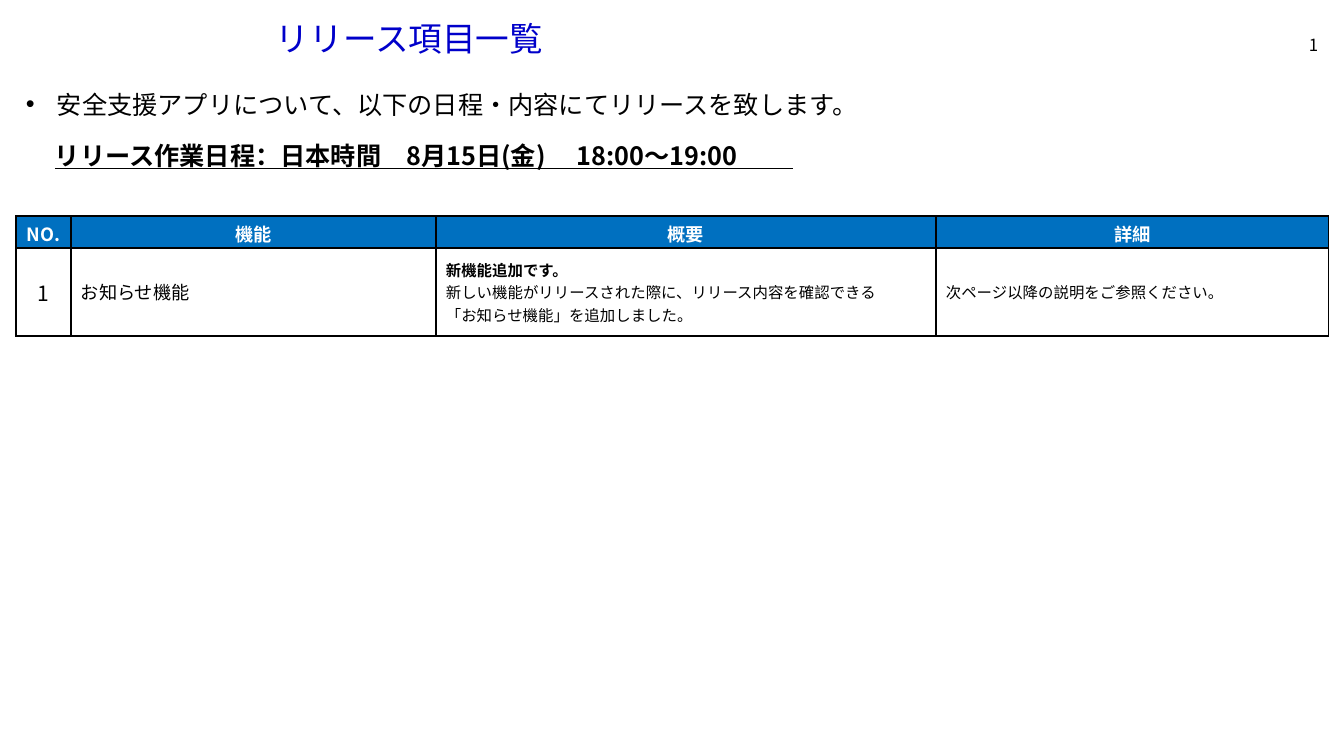
from lxml.etree import SubElement
from pptx import Presentation
from pptx.dml.color import RGBColor
from pptx.enum.text import MSO_ANCHOR, PP_ALIGN
from pptx.oxml.ns import qn
from pptx.util import Emu, Pt

FONT = "Noto Sans CJK JP"
BLACK = RGBColor(0x00, 0x00, 0x00)
WHITE = RGBColor(0xFF, 0xFF, 0xFF)
TITLE_BLUE = RGBColor(0x00, 0x00, 0xCA)
HEADER_BLUE = RGBColor(0x00, 0x70, 0xC0)
WIDTH, HEIGHT = 1344, 756


def px(length):
    return Emu(round(length * 12192000 / WIDTH))


class ReleaseSlide:
    def __init__(self, presentation):
        self.slide = presentation.slides.add_slide(presentation.slide_layouts[6])

    def run(self, paragraph, text, size, color=BLACK, bold=False, underline=False):
        run = paragraph.add_run()
        run.text = text
        font = run.font
        font.name, font.size, font.bold = FONT, Pt(size), bold
        font.color.rgb = color
        if underline:
            font.underline = True
        SubElement(run._r.get_or_add_rPr(), qn("a:ea"), typeface=FONT)

    def text(self, box, text, size, align=PP_ALIGN.LEFT, bullet=False, spacing=None, **style):
        shape = self.slide.shapes.add_textbox(*map(px, box))
        frame = shape.text_frame
        frame.word_wrap = True
        frame.vertical_anchor = MSO_ANCHOR.MIDDLE
        paragraph = frame.paragraphs[0]
        paragraph.alignment = align
        if spacing:
            paragraph.line_spacing = spacing
        if bullet:
            properties = paragraph._p.get_or_add_pPr()
            properties.set("marL", str(px(31)))
            properties.set("indent", str(px(-31)))
            SubElement(properties, qn("a:buFont"), typeface="Arial")
            SubElement(properties, qn("a:buChar"), char="•")
        self.run(paragraph, text, size, **style)

    def borders(self, cell):
        properties = cell._tc.get_or_add_tcPr()
        for position, side in enumerate(("lnL", "lnR", "lnT", "lnB")):
            line = SubElement(properties, qn(f"a:{side}"), w=str(Pt(1)))
            fill = SubElement(line, qn("a:solidFill"))
            SubElement(fill, qn("a:srgbClr"), val=str(BLACK))
            properties.remove(line)
            properties.insert(position, line)

    def cell(self, cell, paragraphs, align, fill):
        cell.fill.solid()
        cell.fill.fore_color.rgb = fill
        cell.vertical_anchor = MSO_ANCHOR.MIDDLE
        cell.margin_left = cell.margin_right = px(10)
        cell.margin_top = cell.margin_bottom = px(5)
        frame = cell.text_frame
        for index, (text, size, color, bold) in enumerate(paragraphs):
            paragraph = frame.add_paragraph() if index else frame.paragraphs[0]
            paragraph.alignment = align
            for number, line in enumerate(text.split("\n")):
                if number:
                    paragraph.add_line_break()
                self.run(paragraph, line, size, color, bold)
        self.borders(cell)

    def table(self, left, top, widths, heights, rows):
        frame = self.slide.shapes.add_table(
            len(heights), len(widths), px(left), px(top), px(sum(widths)), px(sum(heights)))
        table = frame.table
        for column, width in zip(table.columns, widths):
            column.width = px(width)
        for row, height in zip(table.rows, heights):
            row.height = px(height)
        for row, contents in enumerate(rows):
            for column, paragraphs in enumerate(contents):
                header = row == 0
                align = PP_ALIGN.CENTER if header or column == 0 else PP_ALIGN.LEFT
                self.cell(table.cell(row, column), paragraphs, align,
                          HEADER_BLUE if header else WHITE)


def main():
    presentation = Presentation()
    presentation.slide_width, presentation.slide_height = px(WIDTH), px(HEIGHT)
    release = ReleaseSlide(presentation)
    release.text((1258, 30, 70, 30), "1", 12, align=PP_ALIGN.RIGHT)
    headers = [[(name, 13, WHITE, True)] for name in ("NO.", "機能", "概要", "詳細")]
    notice = [
        [("1", 15, BLACK, False)],
        [("お知らせ機能", 13, BLACK, False)],
        [("新機能追加です。", 11, BLACK, True),
         ("新しい機能がリリースされた際に、リリース内容を確認できる\n「お知らせ機能」を追加しました。",
          11, BLACK, False)],
        [("次ページ以降の説明をご参照ください。", 11, BLACK, False)],
    ]
    release.table(16, 216, (55, 365, 500, 393), (32, 88), (headers, notice))
    release.text((16, 84, 1298, 40),
                 "安全支援アプリについて、以下の日程・内容にてリリースを致します。", 18, bullet=True)
    release.text((45, 135, 862, 40),
                 "リリース作業日程：日本時間　8月15日(金) 　18:00～19:00　 　", 18,
                 bold=True, underline=True)
    release.text((266, 20, 963, 42), "リリース項目一覧", 24, color=TITLE_BLUE, spacing=0.9)
    presentation.save("out.pptx")


if __name__ == "__main__":
    main()
